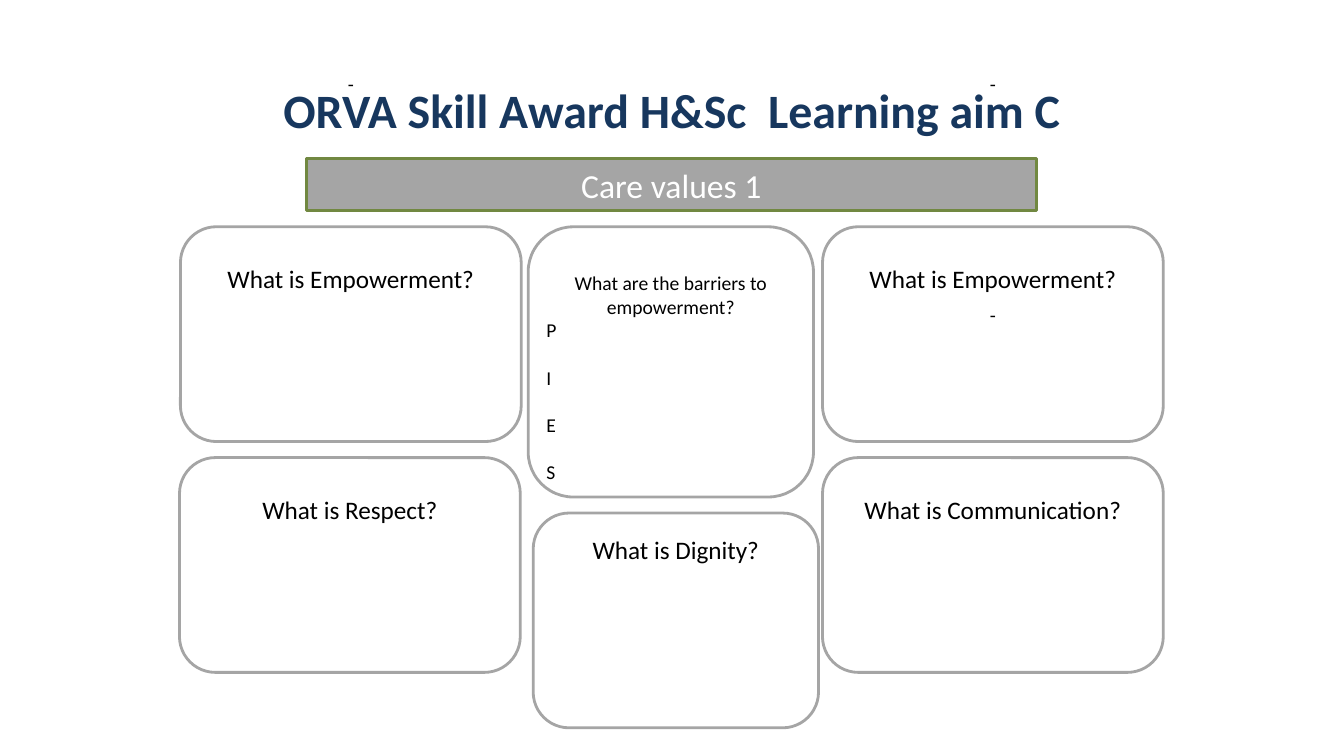
from dataclasses import dataclass
from typing import Optional

from pptx import Presentation
from pptx.dml.color import RGBColor
from pptx.enum.shapes import MSO_SHAPE
from pptx.enum.text import MSO_ANCHOR, PP_ALIGN
from pptx.util import Pt

NAVY = RGBColor(0x17, 0x37, 0x5E)
GREY = RGBColor(0xA5, 0xA5, 0xA5)
GREEN = RGBColor(0x71, 0x88, 0x41)
WHITE = RGBColor(0xFF, 0xFF, 0xFF)
BLACK = RGBColor(0x00, 0x00, 0x00)

INSET = 3.6
LEFT_X, RIGHT_X = 128.9, 587.5
TOP_Y, LOWER_Y = 162, 326.9
SIDE_W, MIDDLE_W = 243.4, 203.8
CARD_H, BARRIERS_H = 153.4, 193
DASH_H = 24


@dataclass(frozen=True)
class Style:
    size: float
    color: RGBColor = BLACK
    bold: bool = False


@dataclass(frozen=True)
class Card:
    heading: str
    x: float
    y: float
    w: float = SIDE_W
    h: float = CARD_H
    top_inset: float = 18.7
    size: float = 18
    letters: str = ""
    dash_y: Optional[float] = None


TITLE = Style(34.2, NAVY, True)
BANNER = Style(24, WHITE)
DASH = Style(14)

CARDS = [
    Card("What is Empowerment?", LEFT_X, TOP_Y, dash_y=60),
    Card("What are the barriers to empowerment?", 377.3, TOP_Y, MIDDLE_W,
         BARRIERS_H, top_inset=22.2, size=14, letters="PIES"),
    Card("What is Empowerment?", RIGHT_X, TOP_Y, dash_y=60),
    Card("What is Respect?", LEFT_X - 0.7, LOWER_Y),
    Card("What is Communication?", RIGHT_X, LOWER_Y, dash_y=224.9),
    Card("What is Dignity?", 380.9, 366.5, MIDDLE_W, top_inset=7.8),
]


def set_frame(tf, anchor, top: float = INSET) -> None:
    values = {
        "word_wrap": True,
        "vertical_anchor": anchor,
        "margin_left": Pt(INSET),
        "margin_right": Pt(INSET),
        "margin_top": Pt(top),
        "margin_bottom": Pt(INSET),
    }
    for name, value in values.items():
        setattr(tf, name, value)


def write(p, text: str, style: Style, align=PP_ALIGN.CENTER) -> None:
    p.alignment = align
    r = p.add_run()
    r.text = text
    values = {"name": "Calibri", "size": Pt(style.size), "bold": style.bold}
    for name, value in values.items():
        setattr(r.font, name, value)
    r.font.color.rgb = style.color


def add_label(s, text: str, style: Style, x: float, y: float, w: float, h: float):
    tb = s.shapes.add_textbox(Pt(x), Pt(y), Pt(w), Pt(h))
    set_frame(tb.text_frame, MSO_ANCHOR.MIDDLE)
    p = tb.text_frame.paragraphs[0]
    write(p, text, style)
    return p


def add_panel(s, kind, x: float, y: float, w: float, h: float,
              fill: RGBColor, line: RGBColor):
    sp = s.shapes.add_shape(kind, Pt(x), Pt(y), Pt(w), Pt(h))
    sp.shadow.inherit = False
    sp.fill.solid()
    sp.fill.fore_color.rgb = fill
    sp.line.color.rgb = line
    sp.line.width = Pt(2)
    return sp


def add_card(s, card: Card) -> None:
    sp = add_panel(s, MSO_SHAPE.ROUNDED_RECTANGLE, card.x, card.y, card.w,
                   card.h, WHITE, GREY)
    sp.adjustments[0] = 0.167
    tf = sp.text_frame
    set_frame(tf, MSO_ANCHOR.TOP, card.top_inset)
    style = Style(card.size)
    write(tf.paragraphs[0], card.heading, style)
    for i, letter in enumerate(card.letters):
        p = tf.add_paragraph()
        p.space_before = Pt(17 if i else 0)
        write(p, letter, style, PP_ALIGN.LEFT)
    if card.dash_y is not None:
        add_label(s, "-", DASH, card.x, card.dash_y - DASH_H / 2, card.w, DASH_H)


def main() -> None:
    prs = Presentation()
    prs.slide_width, prs.slide_height = Pt(960), Pt(540)
    s = prs.slides.add_slide(prs.slide_layouts[6])

    title = add_label(s, "ORVA Skill Award H&Sc  Learning aim C", TITLE,
                      66, 29, 828, 104)
    title.line_spacing = 0.9

    banner = add_panel(s, MSO_SHAPE.RECTANGLE, 218.9, 113, 521.3, 37.4, GREY, GREEN)
    set_frame(banner.text_frame, MSO_ANCHOR.MIDDLE, INSET + 1)
    write(banner.text_frame.paragraphs[0], "Care values 1", BANNER)

    for card in CARDS:
        add_card(s, card)
    prs.save("out.pptx")


if __name__ == "__main__":
    main()
